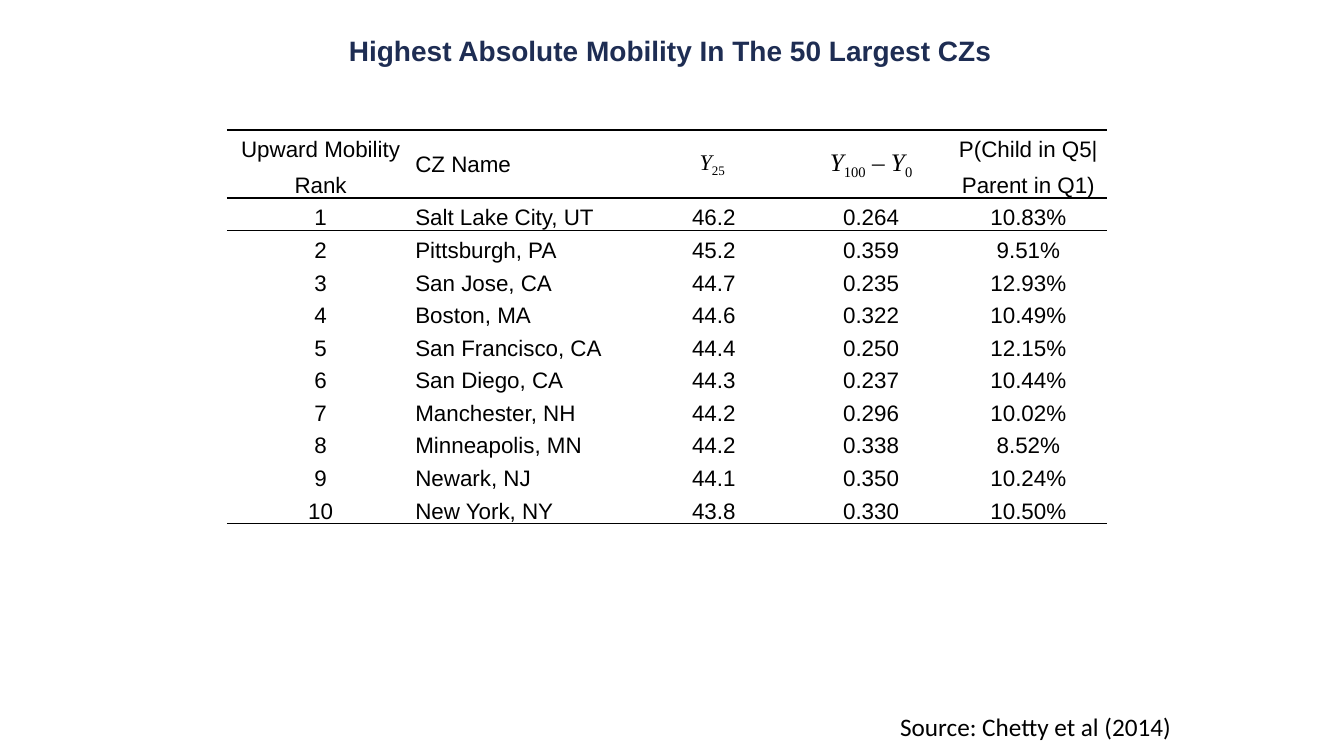
from dataclasses import dataclass
from typing import Any

from lxml import etree
from pptx import Presentation
from pptx.dml.color import RGBColor
from pptx.enum import text as t
from pptx.oxml import ns
from pptx.util import Inches, Pt

NAVY = RGBColor(0x1E, 0x2D, 0x53)
BLACK = RGBColor(0x00, 0x00, 0x00)
WHITE = RGBColor(0xFF, 0xFF, 0xFF)
NO_STYLE_NO_GRID = "{2D5ABB26-0587-4C30-8999-92F81FD0307C}"

ARIAL = {"name": "Arial", "size": Pt(16)}
TIMES = {"name": "Times New Roman", "size": Pt(16)}
TIMES_LARGE = {"name": "Times New Roman", "size": Pt(18)}
CELL_MARGINS = {"margin_left": Inches(0.01), "margin_right": Inches(0.01),
                "margin_top": Inches(0.01), "margin_bottom": 0}


@dataclass(frozen=True)
class Piece:
    """A stretch of text; symbols are italic and indices are lowered."""
    text: str
    symbol: bool = False
    index: bool = False


@dataclass(frozen=True)
class Column:
    width: float
    heading: tuple[tuple[Piece, ...], ...]  # one entry per heading row
    font: dict[str, Any]
    align: t.PP_ALIGN = t.PP_ALIGN.CENTER


@dataclass(frozen=True)
class Zone:
    rank: int
    name: str
    y25: str
    slope: str
    top_quintile: str

    def values(self) -> list[str]:
        return [str(self.rank), self.name, self.y25, self.slope, self.top_quintile]


COLUMNS = [
    Column(1.86, ((Piece("Upward Mobility"),), (Piece("Rank"),)), ARIAL),
    Column(2.19, ((Piece("CZ Name"),),), ARIAL, t.PP_ALIGN.LEFT),
    Column(1.56, ((Piece("Y", symbol=True), Piece("25 ", index=True)),), TIMES),
    Column(1.56, ((Piece("Y", symbol=True), Piece("100", index=True), Piece(" – "),
                   Piece("Y", symbol=True), Piece("0", index=True)),), TIMES_LARGE),
    Column(1.56, ((Piece("P(Child in Q5|"),), (Piece("Parent in Q1)"),)), ARIAL),
]
ZONES = [
    Zone(1, "Salt Lake City, UT", "46.2", "0.264", "10.83%"),
    Zone(2, "Pittsburgh, PA", "45.2", "0.359", "9.51%"),
    Zone(3, "San Jose, CA", "44.7", "0.235", "12.93%"),
    Zone(4, "Boston, MA", "44.6", "0.322", "10.49%"),
    Zone(5, "San Francisco, CA", "44.4", "0.250", "12.15%"),
    Zone(6, "San Diego, CA", "44.3", "0.237", "10.44%"),
    Zone(7, "Manchester, NH", "44.2", "0.296", "10.02%"),
    Zone(8, "Minneapolis, MN", "44.2", "0.338", "8.52%"),
    Zone(9, "Newark, NJ", "44.1", "0.350", "10.24%"),
    Zone(10, "New York, NY", "43.8", "0.330", "10.50%"),
]
HEADING_ROWS = 2
ROW_COUNT = HEADING_ROWS + len(ZONES)
ROW_HEIGHT = 3.88 / ROW_COUNT
# Rules sit above the heading, under it and under the last zone
RULES = {0: ["lnT"], 1: ["lnB"], 2: ["lnT"], ROW_COUNT - 1: ["lnB"]}


def apply_format(target: Any, values: dict[str, Any]) -> None:
    for attribute, value in values.items():
        setattr(target, attribute, value)


def add_piece(paragraph: Any, piece: Piece, font: dict[str, Any],
              color: RGBColor = BLACK) -> None:
    run = paragraph.add_run()
    run.text = piece.text
    apply_format(run.font, font)
    run.font.color.rgb = color
    if piece.symbol:
        run.font.italic = True
    if piece.index:
        run.font._element.set("baseline", "-25000")


def add_rule(cell: Any, side: str) -> None:
    line = etree.Element(ns.qn(f"a:{side}"), w=str(Pt(1)))
    fill = etree.SubElement(line, ns.qn("a:solidFill"))
    etree.SubElement(fill, ns.qn("a:srgbClr"), val=str(BLACK))
    cell._tc.get_or_add_tcPr().insert(0, line)


def fill_cell(cell: Any, pieces: tuple[Piece, ...], font: dict[str, Any],
              align: t.PP_ALIGN) -> None:
    paragraph = cell.text_frame.paragraphs[0]
    paragraph.alignment = align
    for piece in pieces:
        add_piece(paragraph, piece, font)


def add_mobility_table(slide: Any) -> None:
    table = slide.shapes.add_table(ROW_COUNT, len(COLUMNS), Inches(2.25), Inches(1.29),
                                   Inches(8.73), Inches(3.88)).table
    table._tbl.tblPr.find(ns.qn("a:tableStyleId")).text = NO_STYLE_NO_GRID
    table.first_row = table.horz_banding = False
    for row in table.rows:
        row.height = Inches(ROW_HEIGHT)
    table.rows[1].height = Inches(0.35)

    # Cell look and rules
    for row_index in range(ROW_COUNT):
        for column_index in range(len(COLUMNS)):
            cell = table.cell(row_index, column_index)
            apply_format(cell, CELL_MARGINS)
            cell.vertical_anchor = t.MSO_ANCHOR.BOTTOM
            cell.fill.solid()
            cell.fill.fore_color.rgb = WHITE
            sides = list(RULES.get(row_index, []))
            if row_index == 0 and len(COLUMNS[column_index].heading) == 1:
                sides.insert(0, "lnB")
            for side in sides:
                add_rule(cell, side)

    # Headings and zones
    for column_index, column in enumerate(COLUMNS):
        table.columns[column_index].width = Inches(column.width)
        for row_index, pieces in enumerate(column.heading):
            fill_cell(table.cell(row_index, column_index), pieces, column.font, column.align)
        if len(column.heading) == 1:
            heading = table.cell(0, column_index)
            heading.merge(table.cell(HEADING_ROWS - 1, column_index))
            heading.vertical_anchor = t.MSO_ANCHOR.MIDDLE
        for row_index, zone in enumerate(ZONES, HEADING_ROWS):
            fill_cell(table.cell(row_index, column_index),
                      (Piece(zone.values()[column_index]),), ARIAL, column.align)


def add_title(slide: Any) -> None:
    title = slide.shapes.title
    apply_format(title, {"left": Inches(3.46), "top": Inches(0.33),
                         "width": Inches(6.42), "height": Inches(0.34)})
    apply_format(title.text_frame, {
        "margin_left": 0, "margin_right": 0, "margin_top": 0, "margin_bottom": 0,
        "word_wrap": False, "auto_size": t.MSO_AUTO_SIZE.SHAPE_TO_FIT_TEXT,
        "vertical_anchor": t.MSO_ANCHOR.TOP})
    paragraph = title.text_frame.paragraphs[0]
    paragraph.alignment = t.PP_ALIGN.LEFT
    add_piece(paragraph, Piece("Highest Absolute Mobility In The 50 Largest CZs"),
              {"name": "Arial", "size": Pt(20), "bold": True}, NAVY)


def add_source(slide: Any) -> None:
    source = slide.shapes.add_textbox(Inches(8.83), Inches(7.04), Inches(4.5), Inches(0.46))
    source.text_frame.word_wrap = True
    paragraph = source.text_frame.paragraphs[0]
    paragraph.line_spacing = 0.9
    add_piece(paragraph, Piece("Source: Chetty et al (2014)"),
              {"name": "Calibri", "size": Pt(18)})


def main() -> None:
    deck = Presentation()
    apply_format(deck, {"slide_width": Inches(13.33), "slide_height": Inches(7.5)})
    slide = deck.slides.add_slide(deck.slide_layouts[5])
    add_mobility_table(slide)
    add_title(slide)
    add_source(slide)
    deck.save("out.pptx")


if __name__ == "__main__":
    main()
